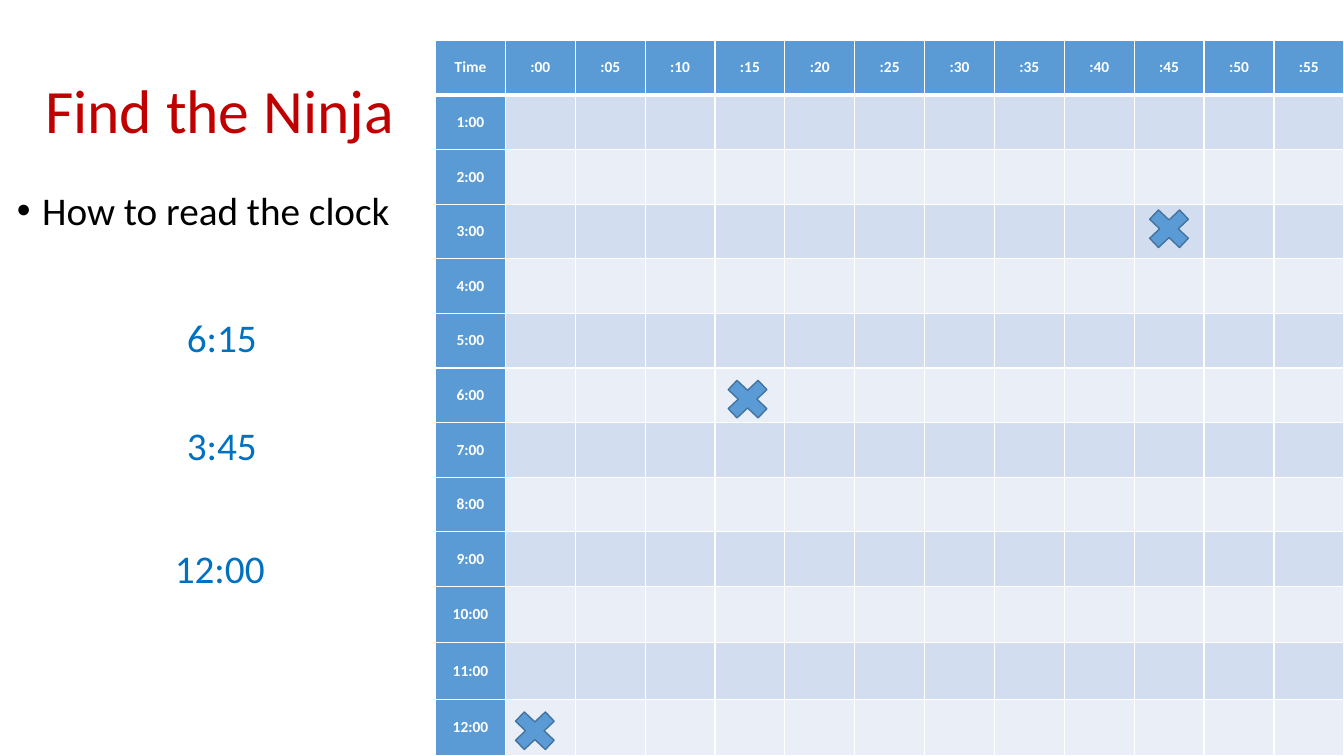
"""Build the clock-reading grid game slide."""
from lxml import etree
from pptx import Presentation
from pptx import util as u
from pptx.dml.color import RGBColor
from pptx.enum import shapes, text
from pptx.oxml import ns

COLORS = {"title": "C00000", "body": "000000", "answer": "0070C0", "head": "5B9BD5",
          "odd": "D2DEEF", "even": "EAEFF7", "white": "FFFFFF", "edge": "43739E"}
HEADER = ["Time"] + [f":{m:02d}" for m in range(0, 60, 5)]
HOURS = [f"{h}:00" for h in range(1, 13)]
TIMES = [("6:15", 0.03, 3.11), ("3:45", 0.03, 4.18), ("12:00", 0.01, 5.4)]
MARKS = [(2.81, 3.29), (6.99, 1.6), (0.7, 6.58)]
CENTER = text.PP_ALIGN.CENTER
MIDDLE = text.MSO_ANCHOR.MIDDLE


def rgb(name):
    """Return the named colour."""
    return RGBColor.from_string(COLORS[name])


def apply(obj, values):
    """Set each attribute of obj from a dict of values."""
    for name, value in values.items():
        setattr(obj, name, value)


def write(p, words, size, color, bold=False):
    """Add one formatted run to a paragraph."""
    r = p.add_run()
    r.text = words
    apply(r.font, {"name": "Calibri", "size": u.Pt(size), "bold": bold})
    r.font.color.rgb = rgb(color)


def add_text(slide, box, words, size, color, anchor=text.MSO_ANCHOR.TOP, **fmt):
    """Add a wrapped one-paragraph text box and return its paragraph."""
    tf = slide.shapes.add_textbox(*map(u.Inches, box)).text_frame
    apply(tf, {"word_wrap": True, "vertical_anchor": anchor})
    p = tf.paragraphs[0]
    apply(p, {"line_spacing": 0.9, **fmt})
    write(p, words, size, color)
    return p


def add_bullet(p):
    """Give a paragraph a hanging round bullet."""
    pPr = p._p.get_or_add_pPr()
    pPr.set("marL", str(u.Inches(0.25)))
    pPr.set("indent", str(-u.Inches(0.25)))
    etree.SubElement(pPr, ns.qn("a:buFont")).set("typeface", "Arial")
    etree.SubElement(pPr, ns.qn("a:buChar")).set("char", "•")


def add_borders(cell, widths):
    """Draw white borders with the given point width for each side."""
    tcPr = cell._tc.get_or_add_tcPr()
    for i, (side, width) in enumerate(widths.items()):
        ln = etree.Element(ns.qn(f"a:ln{side}"), w=str(u.Pt(width)))
        fill = etree.SubElement(ln, ns.qn("a:solidFill"))
        etree.SubElement(fill, ns.qn("a:srgbClr")).set("val", COLORS["white"])
        tcPr.insert(i, ln)


def add_cell(cell, row, col):
    """Fill, border and label one cell of the time grid."""
    is_head = row == 0 or col == 0
    cell.fill.solid()
    cell.fill.fore_color.rgb = rgb("head" if is_head else "odd" if row % 2 else "even")
    add_borders(cell, {"L": 1, "R": 1, "T": 3 if row == 1 else 1, "B": 3 if row == 0 else 1})
    if is_head:
        apply(cell, {"vertical_anchor": MIDDLE, "margin_top": 0, "margin_bottom": 0,
                     "margin_left": u.Inches(0.06), "margin_right": u.Inches(0.06)})
        p = cell.text_frame.paragraphs[0]
        p.alignment = CENTER
        write(p, HOURS[row - 1] if row else HEADER[col], 11, "white", True)


def add_grid(slide, box):
    """Add the table of hours by minutes, with taller two-digit hours."""
    n_rows, n_cols = len(HOURS) + 1, len(HEADER)
    tbl = slide.shapes.add_table(n_rows, n_cols, *map(u.Inches, box)).table
    tall = 0.56
    n_tall = 3
    short = (box[3] - n_tall * tall) / (n_rows - n_tall)
    for col in tbl.columns:
        col.width = u.Inches(box[2] / n_cols)
    for i, row in enumerate(tbl.rows):
        row.height = u.Inches(short if i < n_rows - n_tall else tall)
        for j, cell in enumerate(row.cells):
            add_cell(cell, i, j)


def add_marks(slide, box):
    """Place the crosses over the grid box."""
    for dx, dy in MARKS:
        sp = slide.shapes.add_shape(shapes.MSO_SHAPE.MATH_MULTIPLY, u.Inches(box[0] + dx),
                                    u.Inches(box[1] + dy), u.Inches(0.57), u.Inches(0.54))
        sp.shadow.inherit = False
        sp.fill.solid()
        sp.fill.fore_color.rgb = rgb("head")
        sp.line.color.rgb = rgb("edge")
        sp.line.width = u.Pt(1)


def add_prompts(slide, box):
    """Add the title, the bullet and the times to find."""
    left, top, width, height = box
    add_text(slide, (left, top, width, 1.45), "Find the Ninja", 44, "title", MIDDLE,
             alignment=CENTER)
    spacing = {"space_before": u.Pt(10)}
    add_bullet(add_text(slide, (left + 0.03, top + 1.45, 4.34, 0.99),
                        "How to read the clock", 28, "body", **spacing))
    for words, x, y in TIMES:
        add_text(slide, (x, y, 4.34, 0.99), words, 28, "answer", alignment=CENTER, **spacing)


def main():
    """Build and save the slide."""
    prs = Presentation()
    apply(prs, {"slide_width": u.Inches(13.33), "slide_height": u.Inches(7.5)})
    slide = prs.slides.add_slide(prs.slide_layouts[6])
    grid = (4.32, 0.4, 9.01, 7.1)
    add_grid(slide, grid)
    add_prompts(slide, (0.04, 0.4, 4.28, 7.1))
    add_marks(slide, grid)
    prs.save("out.pptx")


if __name__ == "__main__":
    main()
